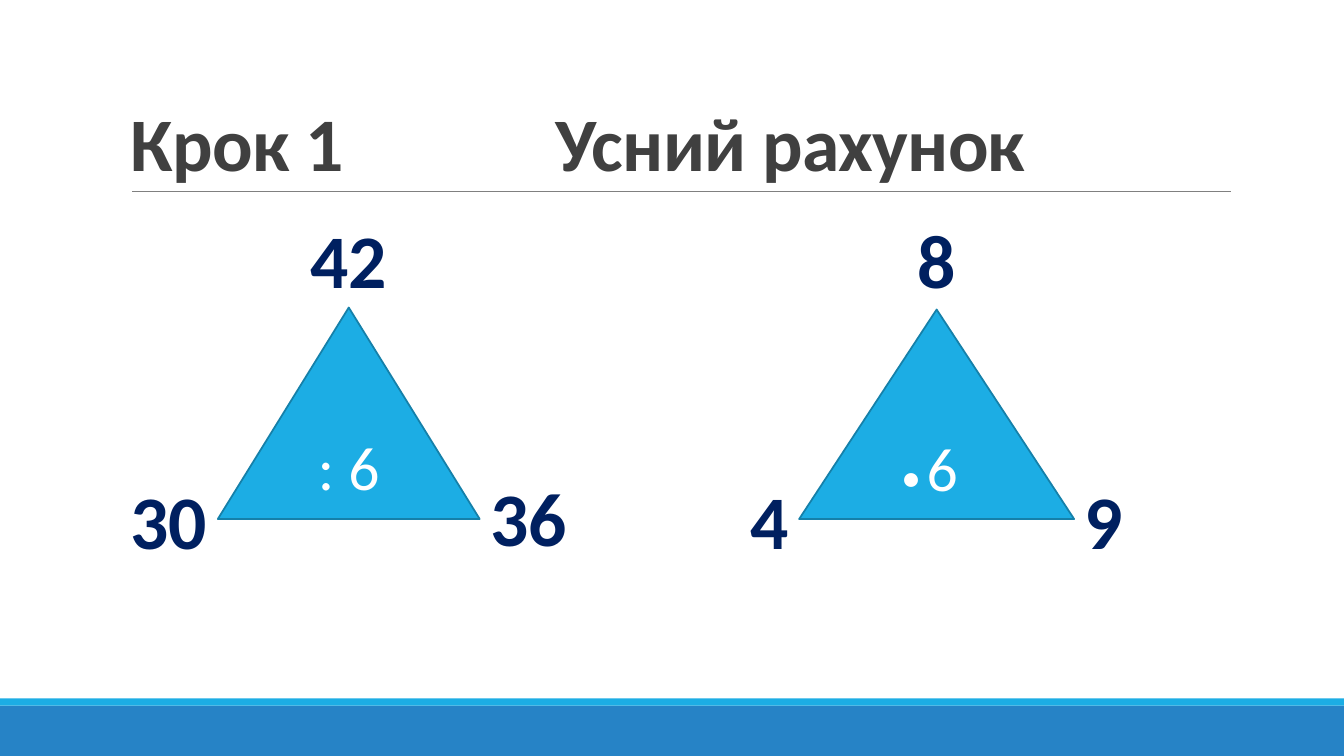
from dataclasses import dataclass

from lxml.etree import SubElement
from pptx import Presentation
from pptx.dml.color import RGBColor
from pptx.enum.shapes import MSO_CONNECTOR, MSO_SHAPE
from pptx.enum.text import MSO_ANCHOR, MSO_AUTO_SIZE, PP_ALIGN
from pptx.oxml.ns import qn
from pptx.util import Cm, Pt


@dataclass(frozen=True)
class Theme:
    font: str = "Calibri"
    sky: str = "1CADE4"
    blue: str = "2683C6"
    edge: str = "1580A9"
    navy: str = "002060"
    dark: str = "404040"
    gray: str = "808080"
    white: str = "FFFFFF"
    large: int = 54
    sign: int = 44
    dot: int = 28
    small: int = 18


def tint(code):
    return RGBColor.from_string(code)


def write(para, text, *, font, size, color, bold=False, rim=None, space=None):
    """Add one run of text with its format."""
    run = para.add_run()
    run.text = text
    run.font.name = font
    run.font.size = Pt(size)
    run.font.bold = bold
    run.font.color.rgb = tint(color)
    props = run.font._element
    if space is not None:
        props.set("spc", str(round(space * 100)))
    if rim:
        line = SubElement(props, qn("a:ln"), w=str(Pt(1)))
        fill = SubElement(line, qn("a:solidFill"))
        SubElement(fill, qn("a:srgbClr"), val=rim)
        props.insert(0, line)


class Board:
    def __init__(self, slide, theme):
        self.slide = slide
        self.theme = theme

    def shape(self, kind, box, fill, edge=None):
        item = self.slide.shapes.add_shape(kind, *map(Cm, box))
        item.shadow.inherit = False
        item.fill.solid()
        item.fill.fore_color.rgb = tint(fill)
        if edge:
            item.line.color.rgb = tint(edge)
            item.line.width = Pt(1.25)
        else:
            item.line.fill.background()
        return item

    def rule(self, left, right, top):
        ends = map(Cm, (left, top, right, top))
        line = self.slide.shapes.add_connector(MSO_CONNECTOR.STRAIGHT, *ends)
        line.line.color.rgb = tint(self.theme.gray)
        line.line.width = Pt(0.5)
        SubElement(line._element.spPr, qn("a:effectLst"))

    def title(self, text, box, stop):
        frame = self.slide.shapes.add_textbox(*map(Cm, box)).text_frame
        frame.word_wrap = True
        frame.vertical_anchor = MSO_ANCHOR.BOTTOM
        para = frame.paragraphs[0]
        para.line_spacing = 0.85
        tabs = SubElement(para._p.get_or_add_pPr(), qn("a:tabLst"))
        SubElement(tabs, qn("a:tab"), pos=str(Cm(stop)), algn="l")
        write(para, text, font=self.theme.font, size=self.theme.large,
              color=self.theme.dark, bold=True, space=-0.5)

    def label(self, text, left, top, width):
        box = map(Cm, (left, top, width, 2.57))
        frame = self.slide.shapes.add_textbox(*box).text_frame
        frame.word_wrap = False
        frame.auto_size = MSO_AUTO_SIZE.SHAPE_TO_FIT_TEXT
        para = frame.paragraphs[0]
        para.alignment = PP_ALIGN.CENTER
        write(para, text, font=self.theme.font, size=self.theme.large,
              color=self.theme.navy, bold=True, rim=self.theme.sky)

    def puzzle(self, box, parts, labels, wide, drop):
        """Draw a triangle with a number at each corner."""
        left, _, width, _ = box
        item = self.shape(MSO_SHAPE.ISOSCELES_TRIANGLE, box,
                          self.theme.sky, self.theme.edge)
        item.text_frame.vertical_anchor = MSO_ANCHOR.MIDDLE
        para = item.text_frame.paragraphs[0]
        para.alignment = PP_ALIGN.CENTER
        for text, size in parts:
            write(para, text, font=self.theme.font, size=size,
                  color=self.theme.white)
        spots = ((left - wide, 11.81),
                 (left + (width - wide) / 2, 5.23),
                 (left + width, drop))
        for text, (x, y) in zip(labels, spots):
            self.label(text, x, y, wide)


def main():
    deck = Presentation()
    deck.slide_width, deck.slide_height = Cm(33.87), Cm(19.05)
    theme = Theme()
    board = Board(deck.slides.add_slide(deck.slide_layouts[6]), theme)

    # Bottom bands
    board.shape(MSO_SHAPE.RECTANGLE, (0, 17.78, 33.87, 1.27), theme.blue)
    board.shape(MSO_SHAPE.RECTANGLE, (0, 17.6, 33.87, 0.18), theme.sky)

    # Heading
    board.rule(3.33, 31.01, 4.83)
    board.title("Крок 1\tУсний рахунок", (3.05, 0.79, 27.94, 4.04), 10.7)

    # Division and multiplication triangles
    board.puzzle((5.49, 7.75, 6.6, 5.33), [(": 6", theme.sign)],
                 ("30", "42", "36"), wide=2.46, drop=11.73)
    board.puzzle((20.14, 7.8, 6.93, 5.28),
                 [("•", theme.dot), (" ", theme.small), ("6 ", theme.sign)],
                 ("4", "8", "9"), wide=1.5, drop=11.81)

    deck.save("out.pptx")


if __name__ == "__main__":
    main()
